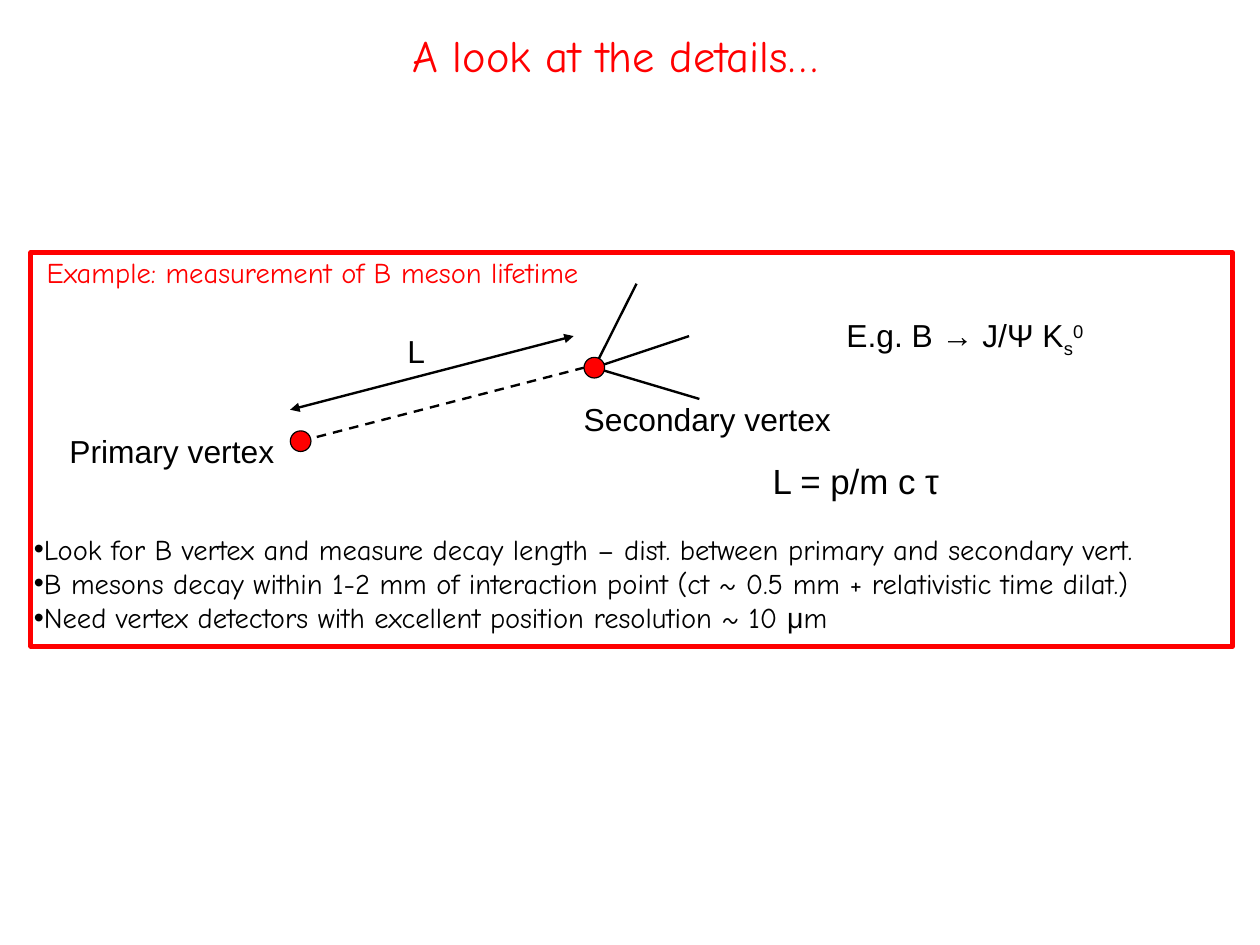
from lxml import etree
from pptx import Presentation
from pptx.dml.color import RGBColor
from pptx.enum import dml, shapes, text
from pptx.oxml import ns
from pptx.util import Pt

RED = RGBColor(0xFF, 0, 0)
BLACK = RGBColor(0, 0, 0)
WHITE = RGBColor(0xFF, 0xFF, 0xFF)
HAND, SANS = "Comic Neue", "Arial"
RADIUS = 6.5


def add_text(para, words, font=SANS, size=20, color=BLACK, baseline=0):
    span = para.add_run()
    span.text = words
    span.font.name, span.font.size = font, Pt(size)
    span.font.color.rgb = color
    if baseline:
        span._r.get_or_add_rPr().set("baseline", str(baseline * 1000))


def set_insets(frame, left, top):
    frame.margin_left = frame.margin_right = Pt(left)
    frame.margin_top = frame.margin_bottom = Pt(top)


def add_label(page, left, top, width, height=32.4, inset=(7.9, 4.3), wrap=False):
    box = page.shapes.add_textbox(Pt(left), Pt(top), Pt(width), Pt(height))
    frame = box.text_frame
    frame.word_wrap = wrap
    frame.auto_size = text.MSO_AUTO_SIZE.SHAPE_TO_FIT_TEXT
    set_insets(frame, *inset)
    return frame.paragraphs[0]


def add_filled(page, kind, left, top, width, height, fill, line, weight):
    shape = page.shapes.add_shape(kind, Pt(left), Pt(top), Pt(width), Pt(height))
    shape.shadow.inherit = False
    shape.fill.solid()
    shape.fill.fore_color.rgb = fill
    shape.line.color.rgb = line
    shape.line.width = Pt(weight)


def add_line(page, start, end, dashed=False, arrows=False):
    line = page.shapes.add_connector(
        shapes.MSO_CONNECTOR.STRAIGHT, *(Pt(value) for value in (*start, *end)))
    line.line.color.rgb = BLACK
    line.line.width = Pt(1.5)
    if dashed:
        line.line.dash_style = dml.MSO_LINE.DASH
    if arrows:
        stroke = line.line._get_or_add_ln()
        for tag in ("a:headEnd", "a:tailEnd"):
            etree.SubElement(stroke, ns.qn(tag), type="triangle")
    etree.SubElement(line.element.spPr, ns.qn("a:effectLst"))


def add_title(page, left, top, width, height):
    title = page.shapes.title
    title.left, title.top = Pt(left), Pt(top)
    title.width, title.height = Pt(width), Pt(height)
    frame = title.text_frame
    frame.vertical_anchor = text.MSO_ANCHOR.MIDDLE
    set_insets(frame, 0, 0)
    para = frame.paragraphs[0]
    para.alignment = text.PP_ALIGN.CENTER
    para.line_spacing = 0.93
    add_text(para, "A look at the details…", HAND, 28, RED)


def add_decay_diagram(page, left, top):
    def at(x, y):
        return left + x, top + y

    # Flight path, decay tracks and length arrow
    primary, secondary = at(170, 118.8), at(355, 72.5)
    add_line(page, primary, (secondary[0] - RADIUS, secondary[1]), dashed=True)
    for track_end in ((414.7, 52.6), (381.6, 19.6), (421.2, 92.2)):
        add_line(page, secondary, at(*track_end))
    for x, y in (primary, secondary):
        add_filled(page, shapes.MSO_SHAPE.OVAL, x - RADIUS, y - RADIUS,
                   2 * RADIUS, 2 * RADIUS, RED, BLACK, 0.75)
    add_line(page, at(163.4, 99), at(342, 52.6), arrows=True)

    # Labels
    for words, x, y, width in (("L", 229.4, 45.7, 27.4),
                               ("Primary vertex", 16.4, 108.3, 146.2),
                               ("Secondary vertex", 340.4, 88.4, 172.8)):
        add_text(add_label(page, *at(x, y), width), words)

    # Formulas
    add_text(add_label(page, *at(459.4, 126), 122.4, 34.6), "L = p/m c τ", size=22)
    decay = add_label(page, *at(505.9, 35.6), 200.2, wrap=True)
    for words, baseline in (("E.g. B → J/Ψ K", 0), ("s", -25), ("0", 30)):
        add_text(decay, words, baseline=baseline)


def add_bullets(page, left, top, width, height):
    box = page.shapes.add_textbox(Pt(left), Pt(top), Pt(width), Pt(height))
    frame = box.text_frame
    frame.word_wrap = True
    set_insets(frame, 0, 0)
    frame.margin_top = Pt(2.2)
    points = (
        [("Look for B vertex and measure decay length – dist. between primary"
          " and secondary vert.", HAND)],
        [("B mesons decay within 1-2 mm of interaction point"
          " (ct ~ 0.5 mm + relativistic time dilat.)", HAND)],
        [("Need vertex detectors with excellent position resolution ~ 10 ", HAND),
         ("μ", SANS), ("m", HAND)],
    )
    for index, point in enumerate(points):
        para = frame.add_paragraph() if index else frame.paragraphs[0]
        props = para._p.get_or_add_pPr()
        color = etree.SubElement(props, ns.qn("a:buClr"))
        etree.SubElement(color, ns.qn("a:srgbClr"), val=str(BLACK))
        etree.SubElement(props, ns.qn("a:buFont"), typeface=SANS)
        etree.SubElement(props, ns.qn("a:buChar"), char="•")
        for words, font in point:
            add_text(para, words, font, 18)


def add_example(page, left, top, width, height):
    # Red frame, then its contents
    add_filled(page, shapes.MSO_SHAPE.RECTANGLE, left, top, width, height,
               WHITE, RED, 3)
    add_bullets(page, left + 2, top + 173.5, width - 4.4, 69)
    add_decay_diagram(page, left, top)
    heading = add_label(page, left + 2.9, top, 378.7, 27.4, inset=(7.2, 3.6))
    heading.line_spacing = 0.93
    add_text(heading, "Example: measurement of B meson lifetime", HAND, 18, RED)


def main():
    deck = Presentation()
    deck.slide_width, deck.slide_height = Pt(793.75), Pt(595.25)
    page = deck.slides.add_slide(deck.slide_layouts[5])
    add_title(page, 39.6, 7.9, 695.5, 56.2)
    add_example(page, 19.4, 159.1, 757.1, 248)
    deck.save("out.pptx")


if __name__ == "__main__":
    main()
